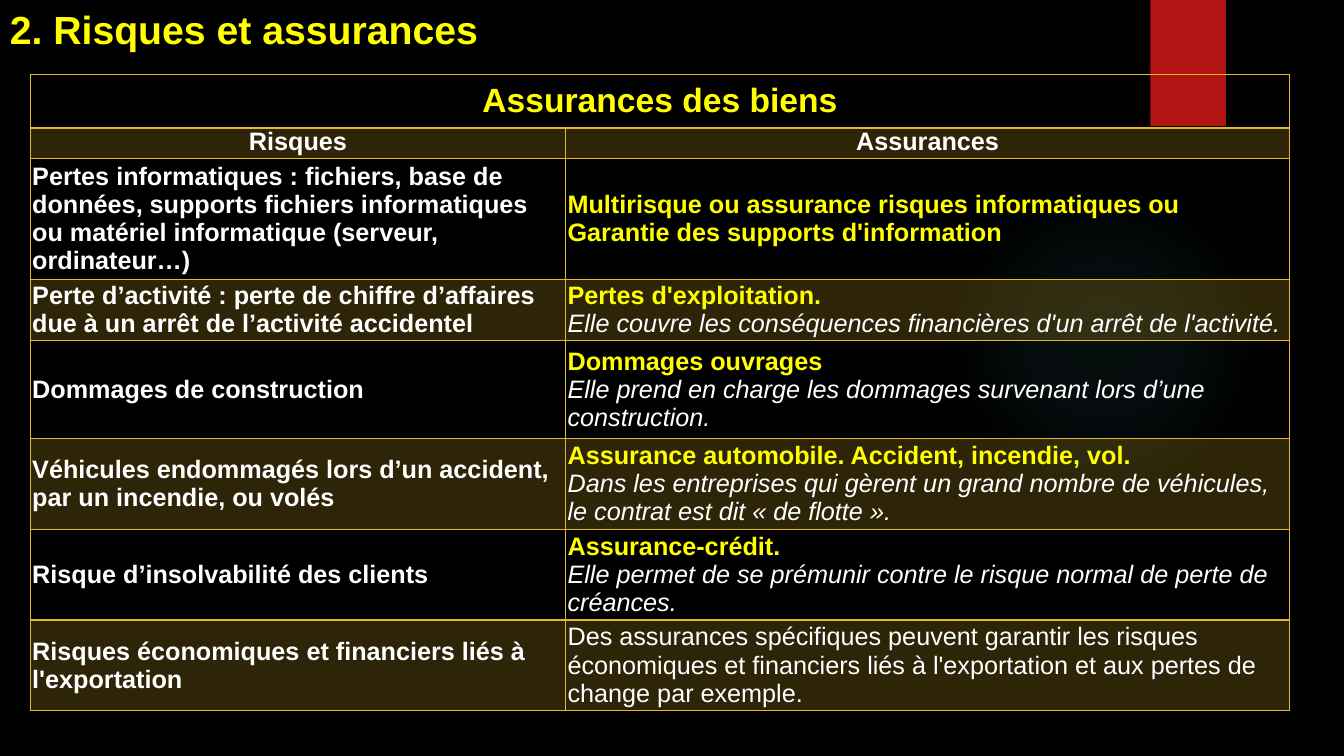
from lxml import etree
from pptx import Presentation
from pptx.dml.color import RGBColor
from pptx.enum import shapes, text
from pptx.oxml import parse_xml
from pptx.oxml.ns import qn
from pptx.util import Inches, Pt

FONT = "Arial"
BLACK, WHITE, YELLOW = "000000", "FFFFFF", "FFFF00"
GOLD, RED, TEAL = "E6B729", "B01513", "50B9C1"
NS = 'xmlns:a="http://schemas.openxmlformats.org/drawingml/2006/main"'

TITLE = "2. Risques et assurances"
TABLE_TITLE = "Assurances des biens"
HEADINGS = ("Risques", "Assurances")
# Risk, insurance name, explanation
RISKS = [
    ("Pertes informatiques : fichiers, base de données, supports fichiers informatiques "
     "ou matériel informatique (serveur, ordinateur…)",
     "Multirisque ou assurance risques informatiques ou Garantie des supports d'information",
     None),
    ("Perte d’activité : perte de chiffre d’affaires due à un arrêt de l’activité accidentel",
     "Pertes d'exploitation.",
     "Elle couvre les conséquences financières d'un arrêt de l'activité."),
    ("Dommages de construction",
     "Dommages ouvrages",
     "Elle prend en charge les dommages survenant lors d’une construction."),
    ("Véhicules endommagés lors d’un accident, par un incendie, ou volés",
     "Assurance automobile. Accident, incendie, vol.",
     "Dans les entreprises qui gèrent un grand nombre de véhicules, "
     "le contrat est dit « de flotte »."),
    ("Risque d’insolvabilité des clients",
     "Assurance-crédit.",
     "Elle permet de se prémunir contre le risque normal de perte de créances."),
    ("Risques économiques et financiers liés à l'exportation",
     None,
     "Des assurances spécifiques peuvent garantir les risques économiques et financiers "
     "liés à l'exportation et aux pertes de change par exemple."),
]
COL_WIDTHS = (5.31, 7.18)
ROW_HEIGHTS = (0.53, 0.3, 1.2, 0.61, 0.97, 0.9, 0.9, 0.9)


def rgb(value):
    return RGBColor.from_string(value)


def add_shape(s, kind, box, color):
    sp = s.shapes.add_shape(kind, *map(Inches, box))
    sp.shadow.inherit = False
    sp.fill.solid()
    sp.fill.fore_color.rgb = rgb(color)
    sp.line.fill.background()
    return sp


def add_run(p, content, size=18, color=WHITE, bold=False, italic=False):
    r = p.add_run()
    r.text = content
    r.font.name, r.font.size = FONT, Pt(size)
    r.font.bold, r.font.italic = bold, italic
    r.font.color.rgb = rgb(color)


def add_backdrop(s):
    """Soft teal glow and red ribbon behind the table."""
    glow = add_shape(s, shapes.MSO_SHAPE.OVAL, (9.41, 1.83, 3.08, 3.08), TEAL)
    stops = "".join(
        f'<a:gs pos="{pos}000"><a:srgbClr val="{TEAL}"><a:alpha val="{alpha}000"/></a:srgbClr></a:gs>'
        for pos, alpha in ((0, 7), (36, 6), (69, 0)))
    gradient = parse_xml(
        f'<a:gradFill {NS}><a:gsLst>{stops}</a:gsLst><a:path path="circle">'
        '<a:fillToRect l="50000" t="50000" r="50000" b="50000"/></a:path></a:gradFill>')
    solid = glow._element.spPr.find(qn("a:solidFill"))
    solid.getparent().replace(solid, gradient)

    ribbon = add_shape(s, shapes.MSO_SHAPE.RECTANGLE, (11.41, 0, 0.75, 1.25), RED)
    ribbon._element.spPr.find(qn("a:effectLst")).append(parse_xml(
        f'<a:outerShdw {NS} blurRad="{Pt(3)}" dist="{Pt(2)}" dir="5400000" rotWithShape="0">'
        f'<a:srgbClr val="{BLACK}"><a:alpha val="45000"/></a:srgbClr></a:outerShdw>'))


def style_cell(cell, row):
    cell.margin_left = cell.margin_right = Inches(0.02)
    cell.margin_top = cell.margin_bottom = 0
    cell.vertical_anchor = text.MSO_ANCHOR.TOP if row == 1 else text.MSO_ANCHOR.MIDDLE
    tc_pr = cell._tc.get_or_add_tcPr()
    if row % 2:
        cell.fill.solid()
        cell.fill.fore_color.rgb = rgb(GOLD)
        etree.SubElement(tc_pr.find(".//" + qn("a:srgbClr")), qn("a:alpha"), val="20000")
    else:
        cell.fill.background()
    for i, side in enumerate("LRTB"):
        under_title = (row, side) in ((0, "B"), (1, "T"))
        tc_pr.insert(i, parse_xml(
            f'<a:ln{side} {NS} w="{Pt(2 if under_title else 1)}"><a:solidFill>'
            f'<a:srgbClr val="{GOLD}"/></a:solidFill></a:ln{side}>'))


def add_risk_table(s):
    frame = s.shapes.add_table(
        len(ROW_HEIGHTS), len(COL_WIDTHS), Inches(0.3), Inches(0.74),
        Inches(sum(COL_WIDTHS)), Inches(sum(ROW_HEIGHTS)))
    table = frame.table
    table.first_row = table.horz_banding = False
    for column, width in zip(table.columns, COL_WIDTHS):
        column.width = Inches(width)
    for i, height in enumerate(ROW_HEIGHTS):
        table.rows[i].height = Inches(height)
        for cell in table.rows[i].cells:
            style_cell(cell, i)

    table.cell(0, 0).merge(table.cell(0, 1))
    p = table.cell(0, 0).text_frame.paragraphs[0]
    p.alignment = text.PP_ALIGN.CENTER
    add_run(p, TABLE_TITLE, 24, YELLOW, bold=True)
    for col, heading in enumerate(HEADINGS):
        p = table.cell(1, col).text_frame.paragraphs[0]
        p.alignment = text.PP_ALIGN.CENTER
        add_run(p, heading, bold=True)

    for row, (risk, insurance, detail) in enumerate(RISKS, start=2):
        add_run(table.cell(row, 0).text_frame.paragraphs[0], risk, bold=True)
        tf = table.cell(row, 1).text_frame
        p = tf.paragraphs[0]
        if insurance:
            add_run(p, insurance, color=YELLOW, bold=True)
        if detail:
            p = tf.add_paragraph() if insurance else p
            add_run(p, detail, italic=bool(insurance))


def main():
    prs = Presentation()
    prs.slide_width, prs.slide_height = Inches(13.33), Inches(7.5)
    s = prs.slides.add_slide(prs.slide_layouts[6])
    s.background.fill.solid()
    s.background.fill.fore_color.rgb = rgb(BLACK)
    add_backdrop(s)

    title = s.shapes.add_textbox(0, 0, Inches(6.39), Inches(0.57))
    title.text_frame.word_wrap = True
    add_run(title.text_frame.paragraphs[0], TITLE, 28, YELLOW, bold=True)

    add_risk_table(s)
    prs.save("out.pptx")


if __name__ == "__main__":
    main()
